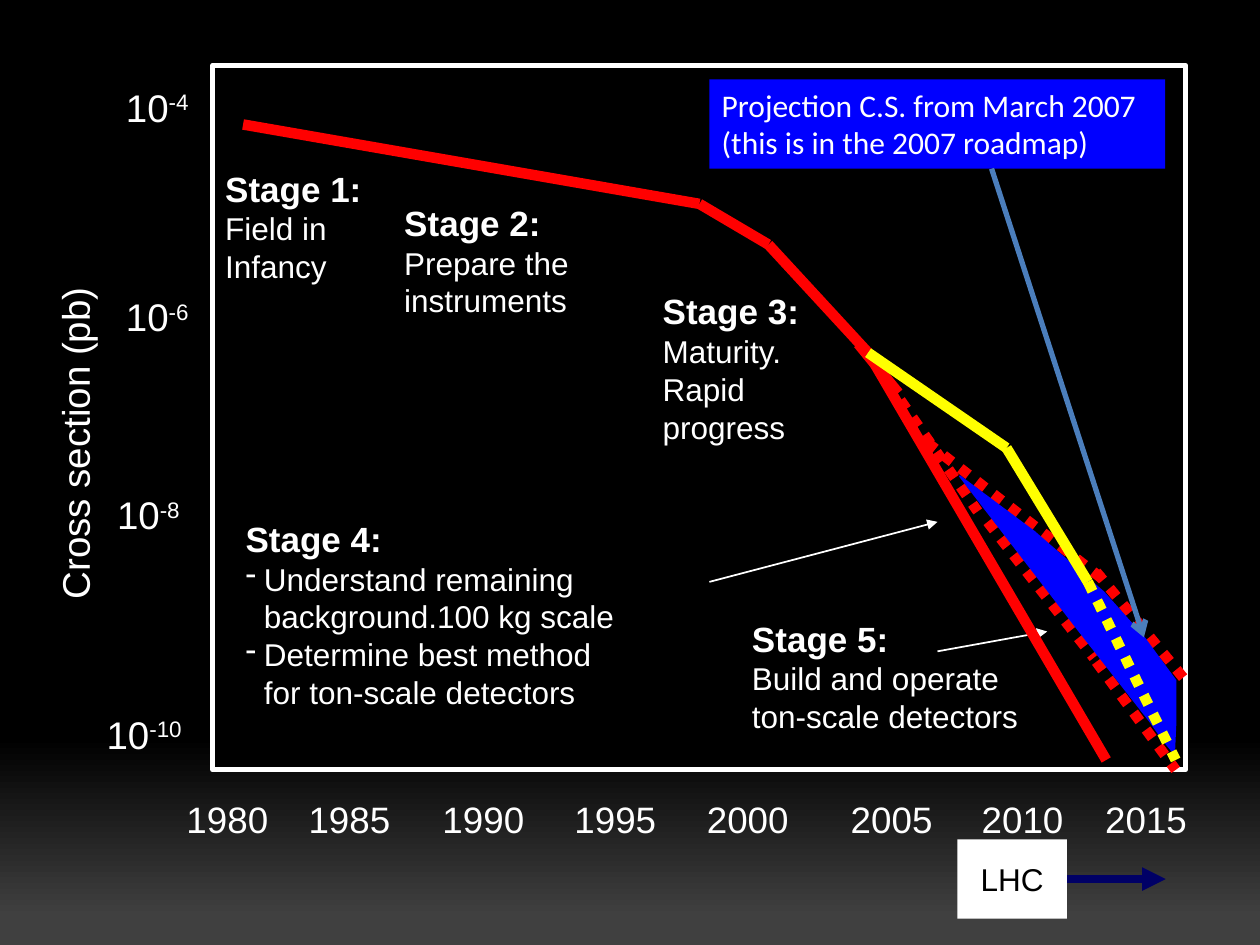
"""Build the slide on the cross section reach of each experimental stage."""
import dataclasses
import itertools

import pptx
import pptx.dml.color
import pptx.enum.dml
import pptx.enum.shapes
import pptx.enum.text
import pptx.oxml.ns
import pptx.oxml.xmlchemy
import pptx.util

Cm, Pt = pptx.util.Cm, pptx.util.Pt
ALIGN, ANCHOR = pptx.enum.text.PP_ALIGN, pptx.enum.text.MSO_ANCHOR


@dataclasses.dataclass(frozen=True)
class Theme:
    white: str = "FFFFFF"
    black: str = "000000"
    red: str = "FF0000"
    yellow: str = "FFFF00"
    blue: str = "0000FF"
    navy: str = "000066"
    steel: str = "4B7EBC"
    backdrop: tuple = ((0, "0D0D0D"), (0, "000000"), (78, "000000"), (97, "404040"), (100, "404040"))
    font: str = "Arial"
    note_font: str = "Calibri"
    axis: int = 22
    years: int = 21
    heading: int = 20
    body: int = 18
    curve: int = 6


THEME = Theme()


def rgb(color):
    return pptx.dml.color.RGBColor.from_string(color)


def add_element(parent, tag, **attributes):
    element = pptx.oxml.xmlchemy.OxmlElement(tag)
    for name, value in attributes.items():
        element.set(name, str(value))
    parent.append(element)
    return element


def set_background(s):
    fill = s.background.fill
    fill.gradient()
    fill.gradient_angle = 270
    stops = s.element.find(".//" + pptx.oxml.ns.qn("a:gsLst"))
    for stop in list(stops):
        stops.remove(stop)
    for position, color in THEME.backdrop:
        stop = add_element(stops, "a:gs", pos=position * 1000)
        add_element(stop, "a:srgbClr", val=color)


def format_runs(p, size, color=THEME.white, font=THEME.font, bold=False):
    for r in p.runs:
        r.font.size, r.font.name, r.font.bold = Pt(size), font, bold
        r.font.color.rgb = rgb(color)


def add_text(s, box, text, size, wrap=False):
    sp = s.shapes.add_textbox(*map(Cm, box))
    tf = sp.text_frame
    tf.word_wrap = wrap
    tf.text = text
    for p in tf.paragraphs:
        format_runs(p, size)
    return sp


def add_power(s, box, exponent):
    p = add_text(s, box, "10", THEME.axis).text_frame.paragraphs[0]
    r = p.add_run()
    r.text = exponent
    format_runs(p, THEME.axis)
    r.font._element.set("baseline", "30000")


def add_years(s, box, years, tabs):
    p = add_text(s, box, "\t".join(years), THEME.years).text_frame.paragraphs[0]
    tab_list = add_element(p._p.get_or_add_pPr(), "a:tabLst")
    for tab in tabs:
        add_element(tab_list, "a:tab", pos=Cm(tab), algn="l")


def add_stage(s, box, number, lines, bulleted=False):
    text = "\n".join([f"Stage {number}:", *lines])
    heading, *body = add_text(s, box, text, THEME.body, wrap=bulleted).text_frame.paragraphs
    format_runs(heading, THEME.heading, bold=True)
    for p in body if bulleted else ():
        pPr = p._p.get_or_add_pPr()
        pPr.set("marL", str(Cm(0.37)))
        pPr.set("indent", str(-Cm(0.37)))
        add_element(pPr, "a:buChar", char="-")


def style_shape(sp, fill, line=None, width=1):
    sp.shadow.inherit = False
    sp.fill.solid()
    sp.fill.fore_color.rgb = rgb(fill)
    if line:
        sp.line.color.rgb = rgb(line)
        sp.line.width = Pt(width)
    else:
        sp.line.fill.background()


def add_box(s, box, fill, text="", line=None, width=1, color=THEME.white,
            font=THEME.font, align=ALIGN.LEFT, anchor=ANCHOR.TOP):
    sp = s.shapes.add_shape(pptx.enum.shapes.MSO_SHAPE.RECTANGLE, *map(Cm, box))
    style_shape(sp, fill, line, width)
    tf = sp.text_frame
    tf.text, tf.vertical_anchor = text, anchor
    for p in tf.paragraphs:
        p.alignment = align
        format_runs(p, THEME.body, color, font)
    return sp


def add_line(s, start, end, color, width=THEME.curve, dotted=False, head=None):
    cx = s.shapes.add_connector(pptx.enum.shapes.MSO_CONNECTOR.STRAIGHT, *map(Cm, start + end))
    cx.line.color.rgb = rgb(color)
    cx.line.width = Pt(width)
    if dotted:
        cx.line.dash_style = pptx.enum.dml.MSO_LINE.ROUND_DOT
    if head:
        add_element(cx._element.spPr.get_or_add_ln(), "a:tailEnd", type=head)
    add_element(cx._element.spPr, "a:effectLst")
    return cx


def add_curve(s, points, color):
    for start, end in itertools.pairwise(points):
        add_line(s, start, end, color)


def add_region(s, points, color):
    corners = [(Cm(x), Cm(y)) for x, y in points]
    builder = s.shapes.build_freeform(*corners[0])
    builder.add_line_segments(corners[1:], close=True)
    style_shape(builder.convert_to_shape(), color, color)


def main():
    prs = pptx.Presentation()
    prs.slide_width, prs.slide_height = Cm(25.4), Cm(19.05)
    s = prs.slides.add_slide(prs.slide_layouts[6])
    set_background(s)

    add_box(s, (4.29, 1.32, 19.61, 14.2), THEME.black, line=THEME.white, width=3)
    add_years(s, (3.51, 15.93, 20.68, 1.14), [str(year) for year in range(1980, 2016, 5)],
              (2.46, 5.16, 7.82, 10.49, 13.39, 16.03, 18.52))
    for exponent, x, y, width in (("-4", 2.29, 1.57, 1.85), ("-6", 2.29, 5.79, 1.85),
                                  ("-8", 2.11, 9.78, 1.85), ("-10", 1.9, 14.2, 2.13)):
        add_power(s, (x, y, width, 1.19), exponent)
    add_text(s, (-1.9, 8.33, 6.81, 1.19), "Cross section (pb)", THEME.axis).rotation = 270

    split = (17.5, 7.11)
    add_curve(s, ((4.9, 2.51), (14.1, 4.11), (15.49, 4.93), split), THEME.red)
    add_line(s, (17.3, 6.93), (18.11, 7.92), THEME.red)
    for start, end in (((17.91, 7.72), (19.71, 10.31)), ((18.69, 8.92), (22.3, 11.73)),
                       ((22.1, 11.53), (23.9, 13.72)), ((19.91, 10.52), (22.05, 13.26)),
                       ((22.1, 13.34), (23.7, 15.52))):
        add_line(s, start, end, THEME.red, dotted=True)

    add_stage(s, (4.29, 3.25, 3.28, 2.67), 1, ("Field in", "Infancy"))
    add_stage(s, (7.9, 3.94, 4.04, 2.67), 2, ("Prepare the", "instruments"))
    add_stage(s, (13.11, 5.72, 3.28, 3.43), 3, ("Maturity.", "Rapid", "progress"))
    add_stage(s, (14.91, 12.32, 8, 2.67), 5, ("Build and operate", "ton-scale detectors"))
    for start, end in (((14.3, 11.73), (18.9, 10.52)), ((18.9, 13.13), (21.11, 12.73))):
        add_line(s, start, end, THEME.white, 1, head="triangle")

    lhc = add_box(s, (19.3, 16.92, 2.21, 1.6), THEME.white, "LHC", color=THEME.black,
                  align=ALIGN.CENTER, anchor=ANCHOR.MIDDLE)
    add_line(s, (21.51, 17.72), (23.5, 17.72), THEME.navy, 4.5,
             head="triangle").begin_connect(lhc, 3)

    add_region(s, ((19.35, 9.6), (21.74, 12.7), (23.19, 14.55), (23.42, 14.88), (23.67, 15.19),
                   (23.7, 14.53), (23.7, 13.72), (23.06, 12.85), (22.25, 11.94),
                   (20.85, 10.72)), THEME.blue)
    add_stage(s, (4.7, 10.31, 10.59, 4.19), 4,
              ("Understand remaining\vbackground.100 kg scale",
               "Determine best method\vfor ton-scale detectors"), bulleted=True)
    add_box(s, (14.3, 1.6, 9.19, 1.8), THEME.blue, font=THEME.note_font,
            text="Projection C.S. from March 2007\n(this is in the 2007 roadmap)")
    add_line(s, split, (22.3, 15.32), THEME.red)
    add_curve(s, (split, (20.29, 9.03), (21.93, 11.73)), THEME.yellow)
    add_line(s, (21.93, 11.73), (23.7, 15.32), THEME.yellow, dotted=True)
    add_line(s, (19.99, 3.4), (23.06, 12.85), THEME.steel, 3, head="arrow")
    prs.save("out.pptx")


if __name__ == "__main__":
    main()
